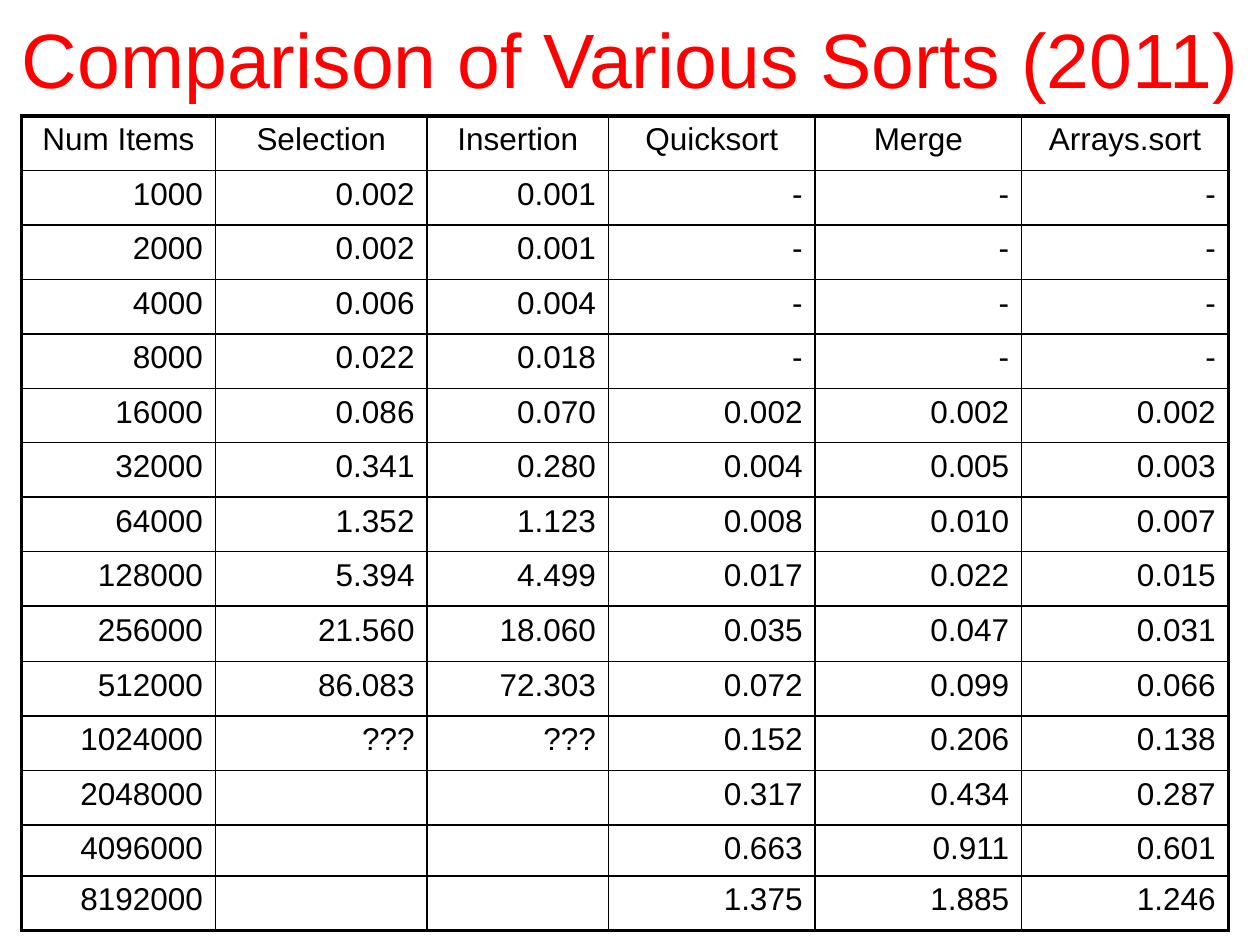
from dataclasses import dataclass

from lxml.etree import SubElement
from pptx import Presentation
from pptx.dml.color import RGBColor
from pptx.enum.text import MSO_ANCHOR, MSO_AUTO_SIZE, PP_ALIGN
from pptx.oxml.ns import qn
from pptx.util import Inches, Pt

TITLE = "Comparison of Various Sorts (2011)"
HEADINGS = ("Num Items", "Selection", "Insertion", "Quicksort", "Merge", "Arrays.sort")
TIMINGS = [
    ("1000", "0.002", "0.001", "-", "-", "-"),
    ("2000", "0.002", "0.001", "-", "-", "-"),
    ("4000", "0.006", "0.004", "-", "-", "-"),
    ("8000", "0.022", "0.018", "-", "-", "-"),
    ("16000", "0.086", "0.070", "0.002", "0.002", "0.002"),
    ("32000", "0.341", "0.280", "0.004", "0.005", "0.003"),
    ("64000", "1.352", "1.123", "0.008", "0.010", "0.007"),
    ("128000", "5.394", "4.499", "0.017", "0.022", "0.015"),
    ("256000", "21.560", "18.060", "0.035", "0.047", "0.031"),
    ("512000", "86.083", "72.303", "0.072", "0.099", "0.066"),
    ("1024000", "???", "???", "0.152", "0.206", "0.138"),
    ("2048000", "", "", "0.317", "0.434", "0.287"),
    ("4096000", "", "", "0.663", "0.911", "0.601"),
    ("8192000", "", "", "1.375", "1.885", "1.246"),
]
ROWS = [HEADINGS, *TIMINGS]

TABLE_LEFT, TABLE_TOP, TABLE_HEIGHT = 0.17, 0.92, 6.45
COLUMN_WIDTHS = (1.54, 1.68, 1.44, 1.64, 1.64, 1.64)
SPECIAL_HEIGHTS = {"256000": 0.44, "4096000": 0.39}


@dataclass(frozen=True)
class Theme:
    font: str = "Arial"
    title_color: str = "FF0000"
    ink: str = "000000"
    title_size: float = 44
    table_size: float = 18
    inner_line: float = 1
    outer_line: float = 2.25


THEME = Theme()


def write(paragraph, text, size, color, alignment):
    paragraph.alignment = alignment
    run = paragraph.add_run()
    run.text = text
    run.font.name = THEME.font
    run.font.size = Pt(size)
    run.font.color.rgb = RGBColor.from_string(color)


def draw_borders(cell, outer_edges):
    """Rule all four sides, heavier where the side lies on the table's edge."""
    properties = cell._tc.get_or_add_tcPr()
    for side, is_outer in outer_edges.items():
        width = THEME.outer_line if is_outer else THEME.inner_line
        line = SubElement(properties, qn(f"a:ln{side}"), w=str(Pt(width)))
        fill = SubElement(line, qn("a:solidFill"))
        SubElement(fill, qn("a:srgbClr"), val=THEME.ink)


def add_title(slide):
    title = slide.shapes.title
    title.left, title.top = Inches(-0.33), Inches(-0.17)
    title.width, title.height = Inches(10.67), Inches(1.25)
    frame = title.text_frame
    frame.auto_size = MSO_AUTO_SIZE.NONE
    frame.word_wrap = True
    frame.vertical_anchor = MSO_ANCHOR.MIDDLE
    write(frame.paragraphs[0], TITLE, THEME.title_size, THEME.title_color, PP_ALIGN.CENTER)


def add_timings(slide):
    table = slide.shapes.add_table(
        len(ROWS), len(HEADINGS), Inches(TABLE_LEFT), Inches(TABLE_TOP),
        Inches(sum(COLUMN_WIDTHS)), Inches(TABLE_HEIGHT),
    ).table
    table.first_row = table.horz_banding = False
    for column, width in zip(table.columns, COLUMN_WIDTHS):
        column.width = Inches(width)

    regular_count = len(ROWS) - len(SPECIAL_HEIGHTS)
    regular_height = (TABLE_HEIGHT - sum(SPECIAL_HEIGHTS.values())) / regular_count
    last_row, last_column = len(ROWS) - 1, len(HEADINGS) - 1
    for r, values in enumerate(ROWS):
        table.rows[r].height = Inches(SPECIAL_HEIGHTS.get(values[0], regular_height))
        alignment = PP_ALIGN.CENTER if r == 0 else PP_ALIGN.RIGHT
        for c, value in enumerate(values):
            cell = table.cell(r, c)
            draw_borders(cell, {"L": c == 0, "R": c == last_column,
                                "T": r == 0, "B": r == last_row})
            cell.fill.background()
            if value:
                write(cell.text_frame.paragraphs[0], value,
                      THEME.table_size, THEME.ink, alignment)


def main():
    presentation = Presentation()
    presentation.slide_width, presentation.slide_height = Inches(10), Inches(7.5)
    slide = presentation.slides.add_slide(presentation.slide_layouts.get_by_name("Title Only"))
    add_title(slide)
    add_timings(slide)
    presentation.save("out.pptx")


if __name__ == "__main__":
    main()
